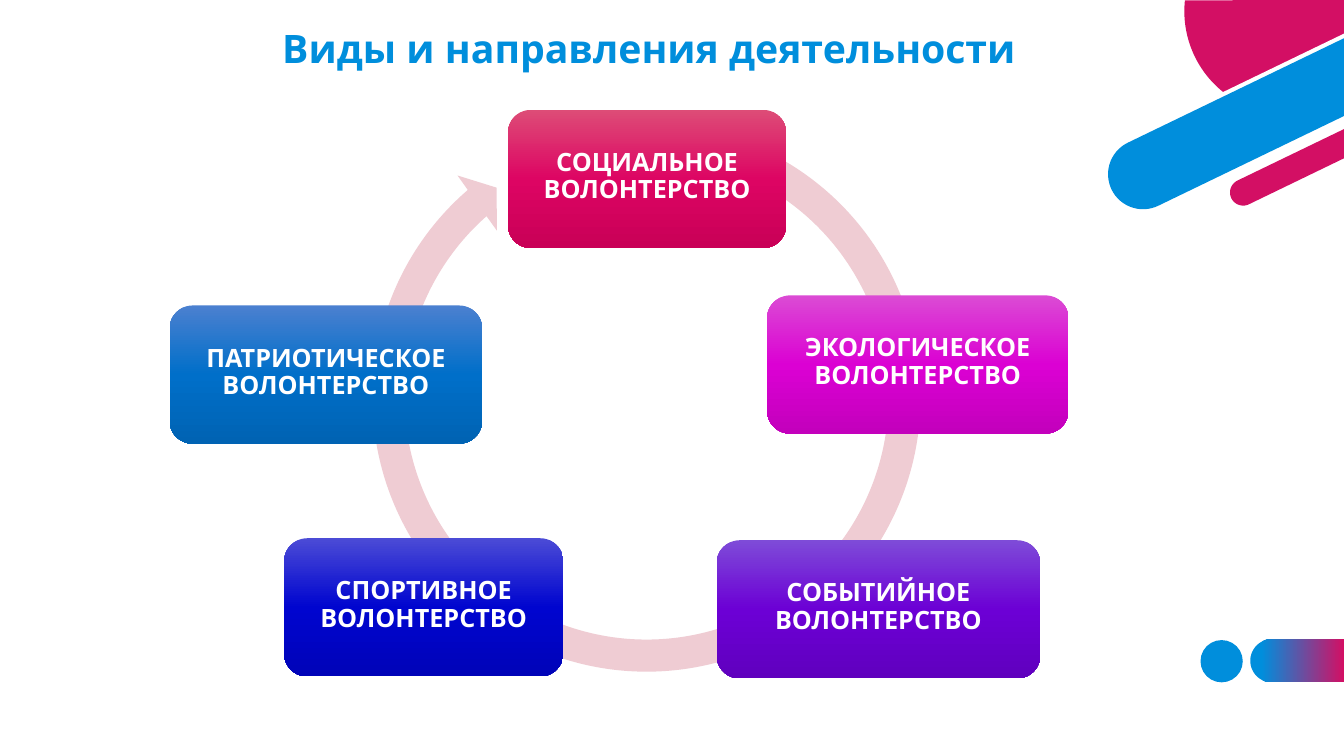
import math

import lxml.etree
import pptx
import pptx.dml.color
import pptx.enum.shapes
import pptx.enum.text
import pptx.oxml.ns
import pptx.util

Pt = pptx.util.Pt
RGB = pptx.dml.color.RGBColor.from_string
qn = pptx.oxml.ns.qn
PRESET = pptx.enum.shapes.MSO_SHAPE

THEME = {
    "font": "League Spartan", "title_size": 28, "label_size": 18,
    "blue": "008EDC", "red": "D30F64", "white": "FFFFFF", "ring": "EFCCD3",
    "social": ("DD4C77", "DD0563", "C90057"),
    "ecology": ("DB4BD4", "DB01D3", "C300BC"),
    "events": ("7E4BD8", "6C00D5", "6000BE"),
    "sport": ("4B4BD6", "0005CF", "0004B8"),
    "patriotic": ("4B80D0", "006FC9", "0063B3"),
}
SLIDE_WIDTH = 960


def paint(shape, stops, angle=0):
    """Fill with one colour, or with a gradient of (percent, colour) stops."""
    shape.shadow.inherit = False
    shape.line.fill.background()
    if isinstance(stops, str):
        shape.fill.solid()
        shape.fill.fore_color.rgb = RGB(stops)
        return
    shape.fill.gradient()
    shape.fill.gradient_angle = angle
    stop_list = shape._element.spPr.find(".//" + qn("a:gsLst"))
    for old_stop in list(stop_list):
        stop_list.remove(old_stop)
    for percent, color in stops:
        stop = lxml.etree.SubElement(stop_list, qn("a:gs"), pos=str(percent * 1000))
        lxml.etree.SubElement(stop, qn("a:srgbClr"), val=color)


def write(shape, text, size, color):
    frame = shape.text_frame
    frame.word_wrap = True
    frame.vertical_anchor = pptx.enum.text.MSO_ANCHOR.MIDDLE
    frame.text = text
    paragraph = frame.paragraphs[0]
    paragraph.alignment = pptx.enum.text.PP_ALIGN.CENTER
    paragraph.line_spacing = 0.9
    paragraph.font.name = THEME["font"]
    paragraph.font.size = Pt(size)
    paragraph.font.bold = True
    paragraph.font.color.rgb = RGB(color)
    return frame


deck = pptx.Presentation()
deck.slide_width, deck.slide_height = Pt(SLIDE_WIDTH), Pt(540)
slide = deck.slides.add_slide(deck.slide_layouts[5])
shapes = slide.shapes

# Title
title = shapes.title
title.left, title.top, title.width, title.height = Pt(155), Pt(14), Pt(617), Pt(45)
write(title, "Виды и направления деятельности", THEME["title_size"], THEME["blue"])

# Decoration: a disc cut by the corner, then bars with a round left end
# that run to the right edge; each tilted bar has a white rim
disc = [(920 + 74 * math.cos(math.radians(turn)), 8 + 74 * math.sin(math.radians(turn)))
        for turn in range(186, 126, -2)]
outlines = [(disc + [(SLIDE_WIDTH, 24.5), (SLIDE_WIDTH, 0)], THEME["red"])]

bars = [
    (816.5, 124.5, 28, 25.8, THEME["white"]),
    (816.5, 124.5, 25, 25.8, THEME["blue"]),
    (888, 137.5, 11.5, 25.8, THEME["white"]),
    (888, 137.5, 9.4, 25.8, THEME["red"]),
    (908.6, 472, 15.5, 0, [(12, THEME["blue"]), (100, THEME["red"])]),
]
for x, y, radius, tilt, fill in bars:
    turns = [math.radians(tilt + turn) for turn in range(0, 181, 6)]
    cap = [(x - radius * math.sin(turn), y - radius * math.cos(turn)) for turn in turns]
    slope = math.tan(math.radians(tilt))
    ends = [(SLIDE_WIDTH, end_y - (SLIDE_WIDTH - end_x) * slope)
            for end_x, end_y in (cap[-1], cap[0])]
    outlines.append((cap + ends, fill))

for outline, fill in outlines:
    corners = [(Pt(x), Pt(y)) for x, y in outline]
    builder = shapes.build_freeform(*corners[0])
    builder.add_line_segments(corners[1:], close=True)
    paint(builder.convert_to_shape(), fill)

dot = shapes.add_shape(PRESET.OVAL, Pt(857.5), Pt(457.2), Pt(30.2), Pt(30.2))
paint(dot, THEME["blue"])

# Ring arrow behind the kinds of volunteering
ring = shapes.add_shape(PRESET.CIRCULAR_ARROW, Pt(253.4), Pt(75.6), Pt(416.9), Pt(416.9))
for index, value in enumerate((0.055, 3.307, 137.379, 174.092, 0.058)):
    ring.adjustments[index] = value
paint(ring, THEME["ring"])

# Kinds of volunteering, clockwise from the top
KIND_HEIGHT = 98.7
kinds = [
    ("СОЦИАЛЬНОЕ", "social", 362.9, 78.5, 198.7),
    ("ЭКОЛОГИЧЕСКОЕ", "ecology", 547.9, 211, 215.3),
    ("СОБЫТИЙНОЕ", "events", 511.9, 385.9, 231.1),
    ("СПОРТИВНОЕ", "sport", 203, 384.5, 199.4),
    ("ПАТРИОТИЧЕСКОЕ", "patriotic", 121.2, 218.2, 223.2),
]
for name, palette, left, top, width in kinds:
    kind = shapes.add_shape(PRESET.ROUNDED_RECTANGLE, Pt(left), Pt(top),
                            Pt(width), Pt(KIND_HEIGHT))
    paint(kind, list(zip((0, 50, 100), THEME[palette])), angle=270)
    frame = write(kind, name + " ВОЛОНТЕРСТВО", THEME["label_size"], THEME["white"])
    frame.margin_left = frame.margin_right = Pt(5)
    frame.margin_top, frame.margin_bottom = Pt(5), Pt(8)

deck.save("out.pptx")
